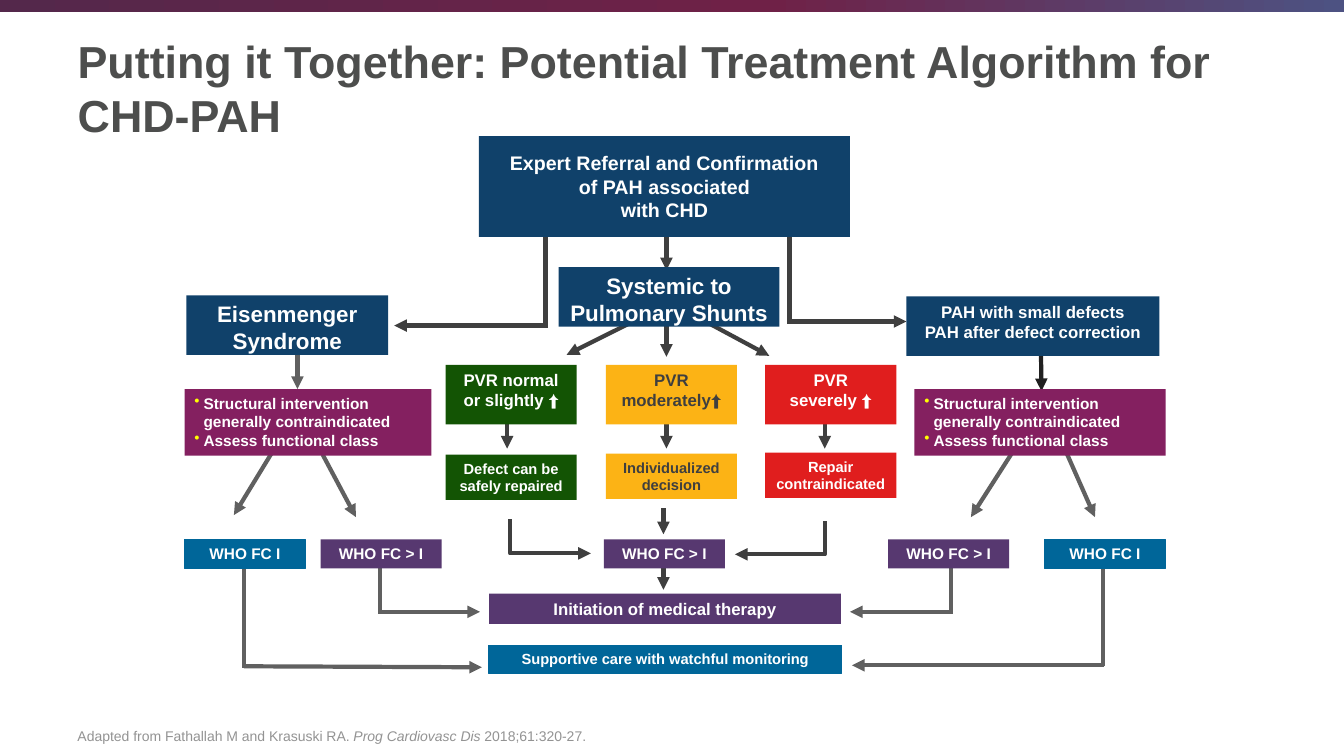
from lxml.etree import SubElement
from pptx import Presentation
from pptx.dml.color import RGBColor
from pptx.enum.shapes import MSO_CONNECTOR as Link, MSO_SHAPE as Shape
from pptx.enum.text import MSO_ANCHOR as Anchor, MSO_AUTO_SIZE as AutoSize, PP_ALIGN as Align
from pptx.oxml.ns import qn
from pptx.util import Pt

EMU_PER_PX = 9144  # 100 px to the inch
COLORS = {
    "white": "FFFFFF", "title": "4D4E4D", "source": "939393", "dark": "3F3F3F",
    "gray": "606060", "black": "202020", "navy": "10416A", "green": "135404",
    "amber": "FCB315", "red": "E01E1E", "blue": "006699", "purple": "573870",
    "plum": "842060", "bullet": "FFFF00",
    "bar_left": "54284B", "bar_middle": "6F2147", "bar_right": "4D5282",
}


def px(*values):
    return [value * EMU_PER_PX for value in values]


def rgb(name):
    return RGBColor.from_string(COLORS[name])


class FlowSlide:
    font = "Arial"

    def __init__(self, deck):
        self.page = deck.slides.add_slide(deck.slide_layouts[5])

    def add_text(self, para, text, size, color, bold=False, italic=False):
        for index, line in enumerate(text.split("\n")):
            if index:
                para.add_line_break()
            span = para.add_run()
            span.text = line
            font = span.font
            font.name, font.size = self.font, Pt(size)
            font.bold, font.italic = bold, italic
            font.color.rgb = rgb(color)

    def title(self, text, *place):
        box = self.page.shapes.title
        box.left, box.top, box.width, box.height = px(*place)
        frame = box.text_frame
        frame.auto_size, frame.vertical_anchor = AutoSize.NONE, Anchor.MIDDLE
        para = frame.paragraphs[0]
        para.alignment = Align.LEFT
        self.add_text(para, text, 32, "title", bold=True)

    def bar(self, stops, *place):
        bar = self.page.shapes.add_shape(Shape.RECTANGLE, *px(*place))
        bar.shadow.inherit = False
        bar.line.fill.background()
        bar.fill.gradient()
        bar.fill.gradient_angle = 0
        stop_list = bar._element.spPr.find(qn("a:gradFill")).find(qn("a:gsLst"))
        for old_stop in list(stop_list):
            stop_list.remove(old_stop)
        for percent, color in stops:
            stop = SubElement(stop_list, qn("a:gs"), pos=str(percent * 1000))
            SubElement(stop, qn("a:srgbClr"), val=COLORS[color])

    def connector(self, color, start, end, arrow=True, bent=False):
        kind = Link.ELBOW if bent else Link.STRAIGHT
        line = self.page.shapes.add_connector(kind, *px(*start, *end))
        line.line.color.rgb = rgb(color)
        line.line.width = Pt(3)
        props = line._element.spPr
        if bent:  # turn right at the start
            geometry = props.find(qn("a:prstGeom"))
            guides = geometry.find(qn("a:avLst"))
            if guides is None:
                guides = SubElement(geometry, qn("a:avLst"))
            SubElement(guides, qn("a:gd"), name="adj1", fmla="val 0")
        if arrow:
            SubElement(props.find(qn("a:ln")), qn("a:tailEnd"), type="triangle")
        SubElement(props, qn("a:effectLst"))

    def box(self, lines, place, fill, size, color="white", outline=0,
            anchor=Anchor.TOP, wrap=True, bullets=False):
        box = self.page.shapes.add_shape(Shape.RECTANGLE, *px(*place))
        box.shadow.inherit = False
        box.fill.solid()
        box.fill.fore_color.rgb = rgb(fill)
        if outline:
            box.line.color.rgb = rgb(fill)
            box.line.width = Pt(outline)
        else:
            box.line.fill.background()
        frame = box.text_frame
        frame.word_wrap, frame.vertical_anchor = wrap, anchor
        for index, text in enumerate(lines):
            para = frame.add_paragraph() if index else frame.paragraphs[0]
            para.alignment = Align.LEFT if bullets else Align.CENTER
            if bullets:
                self.bullet(para)
            self.add_text(para, text, size, color, bold=True)

    def bullet(self, para):
        props = para._p.get_or_add_pPr()
        indent, = px(9)
        props.set("marL", str(indent))
        props.set("indent", str(-indent))
        tint = SubElement(props, qn("a:buClr"))
        SubElement(tint, qn("a:srgbClr"), val=COLORS["bullet"])
        SubElement(props, qn("a:buChar"), char="•")

    def source(self, spans, *place):
        box = self.page.shapes.add_textbox(*px(*place))
        frame = box.text_frame
        frame.word_wrap, frame.vertical_anchor = True, Anchor.BOTTOM
        for text, italic in spans:
            self.add_text(frame.paragraphs[0], text, 10, "source", italic=italic)


def main():
    deck = Presentation()
    deck.slide_width, deck.slide_height = px(1333, 750)
    flow = FlowSlide(deck)

    # Header
    flow.bar([(0, "bar_left"), (57, "bar_middle"), (100, "bar_right")], 0, 0, 1333, 12)
    flow.title("Putting it Together: Potential Treatment Algorithm for CHD-PAH",
               67, 22, 1175, 130)

    # Plain line segments
    for color, start, end in [
        ("dark", (783, 194), (783, 321)), ("dark", (541, 199), (541, 325)),
        ("gray", (242, 543), (242, 663)), ("gray", (1094, 542), (1094, 661)),
        ("gray", (377, 554), (377, 609)), ("gray", (943, 554), (943, 609)),
    ]:
        flow.connector(color, start, end, arrow=False)

    # Arrows in the centre
    for x, top, bottom in [(658, 559, 585), (658, 504, 530), (661, 210, 268), (661, 310, 354),
                           (503, 401, 445), (661, 401, 445), (818, 401, 445)]:
        flow.connector("dark", (x, top), (x, bottom))
    for start, end in [((541, 323), (391, 323)), ((781, 319), (899, 319)),
                       ((628, 319), (562, 352)), ((696, 317), (763, 353))]:
        flow.connector("dark", start, end)
    for start, end in [((818, 517), (729, 550)), ((506, 515), (586, 549))]:
        flow.connector("dark", start, end, bent=True)

    # Arrows in the side branches
    flow.connector("black", (1032, 318), (1033, 388))
    for start, end in [
        ((295, 332), (295, 386)), ((271, 447), (232, 511)), ((320, 451), (353, 513)),
        ((1004, 449), (963, 513)), ((1055, 443), (1086, 513)),
        ((376, 607), (476, 607)), ((943, 607), (843, 607)),
        ((242, 661), (478, 662)), ((1095, 660), (845, 660)),
    ]:
        flow.connector("gray", start, end)

    # Referral and the three diagnoses
    flow.box(["Expert Referral and Confirmation", "of PAH associated\nwith CHD"],
             (475, 135, 368, 100), "navy", 14, anchor=Anchor.MIDDLE, wrap=False)
    flow.box(["Systemic to Pulmonary Shunts"], (554, 265, 219, 59), "navy", 16)
    flow.box(["Eisenmenger Syndrome"], (185, 293, 200, 59), "navy", 16)
    flow.box(["PAH with small defects", "PAH after defect correction"],
             (899, 294, 251, 59), "navy", 12)

    # Resistance level and its decision
    for left, top, fill, color, level, decision in [
        (442, 451, "green", "white", "PVR normal or slightly ⬆", "Defect can be safely repaired"),
        (601, 450, "amber", "dark", "PVR moderately⬆", "Individualized decision"),
        (759, 449, "red", "white", "PVR\nseverely ⬆", "Repair contraindicated"),
    ]:
        flow.box([level], (left, 362, 130, 59), fill, 12, color)
        flow.box([decision], (left, top, 130, 45), fill, 10.5, color)

    # Side assessments
    for left, width in [(183, 245), (907, 249)]:
        flow.box(["Structural intervention generally contraindicated", "Assess functional class"],
                 (left, 386, width, 66), "plum", 11, bullets=True)

    # Functional classes
    for left in (183, 1036):
        flow.box(["WHO FC I"], (left, 535, 120, 29), "blue", 11, outline=1)
    for left in (318, 599, 881):
        flow.box(["WHO FC > I"], (left, 535, 120, 29), "purple", 11)

    # Treatments
    flow.box(["Initiation of medical therapy"], (485, 589, 349, 30), "purple", 12)
    flow.box(["Supportive care with watchful monitoring"],
             (485, 640, 350, 28), "blue", 10.5, outline=0.75)

    # Source line
    flow.source([("Adapted from Fathallah M and Krasuski RA. ", False),
                 ("Prog Cardiovasc Dis ", True), ("2018;61:320-27.", False)],
                67, 695, 1175, 48)
    deck.save("out.pptx")


if __name__ == "__main__":
    main()
